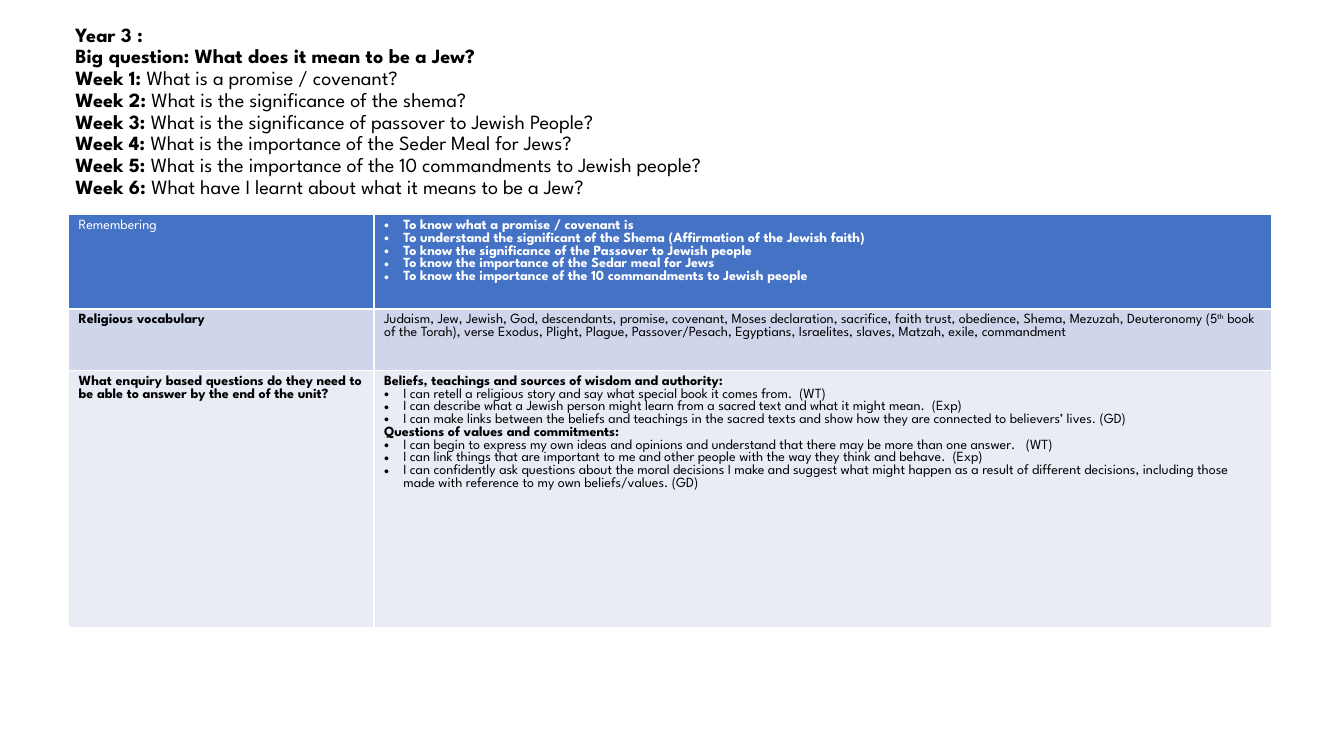
from lxml import etree
from pptx import Presentation
from pptx.dml.color import RGBColor
from pptx.enum import text
from pptx.oxml.ns import qn
from pptx.util import Inches, Pt

FONT = "League Spartan"
INDENT = Inches(0.19)


def style(font, size, color, bold):
    font.name, font.size, font.bold = FONT, Pt(size), bold
    font.color.rgb = RGBColor.from_string(color)


def add_bullet(paragraph):
    properties = paragraph._p.get_or_add_pPr()
    properties.set("marL", str(INDENT))
    properties.set("indent", str(-INDENT))
    etree.SubElement(properties, qn("a:buFont"), typeface="Arial")
    etree.SubElement(properties, qn("a:buChar"), char="•")


presentation = Presentation()
presentation.slide_width, presentation.slide_height = Inches(13.33), Inches(7.5)
slide = presentation.slides.add_slide(presentation.slide_layouts[6])

# Heading: each line has a bold label and a regular question
heading_lines = [
    ("Year 3 :", ""),
    ("Big question: What does it mean to be a Jew?", ""),
    ("Week 1: ", "What is a promise / covenant?"),
    ("Week 2: ", "What is the significance of the shema?"),
    ("Week 3: ", "What is the significance of passover to Jewish People?"),
    ("Week 4: ", "What is the importance of the Seder Meal for Jews?"),
    ("Week 5: ", "What is the importance of the 10 commandments to Jewish people?"),
    ("Week 6: ", "What have I learnt about what it means to be a Jew?"),
]
heading = slide.shapes.add_textbox(Inches(0.65), Inches(0.3), Inches(11.25), Inches(1.61)).text_frame
heading.word_wrap = True
heading.vertical_anchor = text.MSO_ANCHOR.MIDDLE
heading.margin_top = heading.margin_bottom = 0
for number, (label, question) in enumerate(heading_lines):
    line = heading.paragraphs[0] if number == 0 else heading.add_paragraph()
    style(line.font, 14.4, "000000", False)
    line.line_spacing = Pt(15.5)
    for words, bold in ((label, True), (question, False)):
        if words:
            run = line.add_run()
            run.text = words
            style(run.font, 14.4, "000000", bold)

# Table: each cell is a list of (kind, words) paragraphs
PLAIN, BOLD, BULLET, BOLD_BULLET = "plain", "bold", "bullet", "bold bullet"
rows = [
    (0.77, "4472C4", "FFFFFF",
     [(PLAIN, "Remembering")],
     [(BOLD_BULLET, "To know what a promise / covenant is"),
      (BOLD_BULLET, "To understand the significant of the Shema (Affirmation of the Jewish faith)"),
      (BOLD_BULLET, "To know the significance of the Passover to Jewish people"),
      (BOLD_BULLET, "To know the importance of the Sedar meal for Jews"),
      (BOLD_BULLET, "To know the importance of the 10 commandments to Jewish people")]),
    (0.61, "CFD5EA", "000000",
     [(BOLD, "Religious vocabulary")],
     [(PLAIN, "Judaism, Jew, Jewish, God, descendants, promise, covenant, Moses declaration, "
              "sacrifice, faith trust, obedience, Shema, Mezuzah, Deuteronomy (5^th^ book of the "
              "Torah), verse Exodus, Plight, Plague, Passover/Pesach, Egyptians, Israelites, "
              "slaves, Matzah, exile, commandment")]),
    (2.55, "E9EBF5", "000000",
     [(BOLD, "What enquiry based questions do they need to be able to answer by the end of the unit?")],
     [(BOLD, "Beliefs, teachings and sources of wisdom and authority:"),
      (BULLET, "I can retell a religious story and say what special book it comes from.  (WT)"),
      (BULLET, "I can describe what a Jewish person might learn from a sacred text and what it "
               "might mean.  (Exp)"),
      (BULLET, "I can make links between the beliefs and teachings in the sacred texts and show "
               "how they are connected to believers’ lives. (GD)"),
      (BOLD, "Questions of values and commitments:"),
      (BULLET, "I can begin to express my own ideas and opinions and understand that there may be "
               "more than one answer.   (WT)"),
      (BULLET, "I can link things that are important to me and other people with the way they "
               "think and behave.  (Exp)"),
      (BULLET, "I can confidently ask questions about the moral decisions I make and suggest what "
               "might happen as a result of different decisions, including those made with "
               "reference to my own beliefs/values. (GD)")]),
]
plan = slide.shapes.add_table(len(rows), 2, Inches(0.68), Inches(2.13), Inches(11.93), Inches(3.93)).table
for column, width in zip(plan.columns, (3.03, 8.9)):
    column.width = Inches(width)
for row, (height, fill, color, *contents) in zip(plan.rows, rows):
    row.height = Inches(height)
    for cell, content in zip(row.cells, contents):
        cell.fill.solid()
        cell.fill.fore_color.rgb = RGBColor.from_string(fill)
        for number, (kind, words) in enumerate(content):
            paragraph = cell.text_frame.paragraphs[0] if number == 0 else cell.text_frame.add_paragraph()
            if kind in (BULLET, BOLD_BULLET):
                add_bullet(paragraph)
            style(paragraph.font, 10, color, kind in (BOLD, BOLD_BULLET))
            # Every second part between carets is superscript
            for part, piece in enumerate(words.split("^")):
                run = paragraph.add_run()
                run.text = piece
                style(run.font, 10, color, kind in (BOLD, BOLD_BULLET))
                if part % 2:
                    run.font._element.set("baseline", "30000")

presentation.save("out.pptx")
